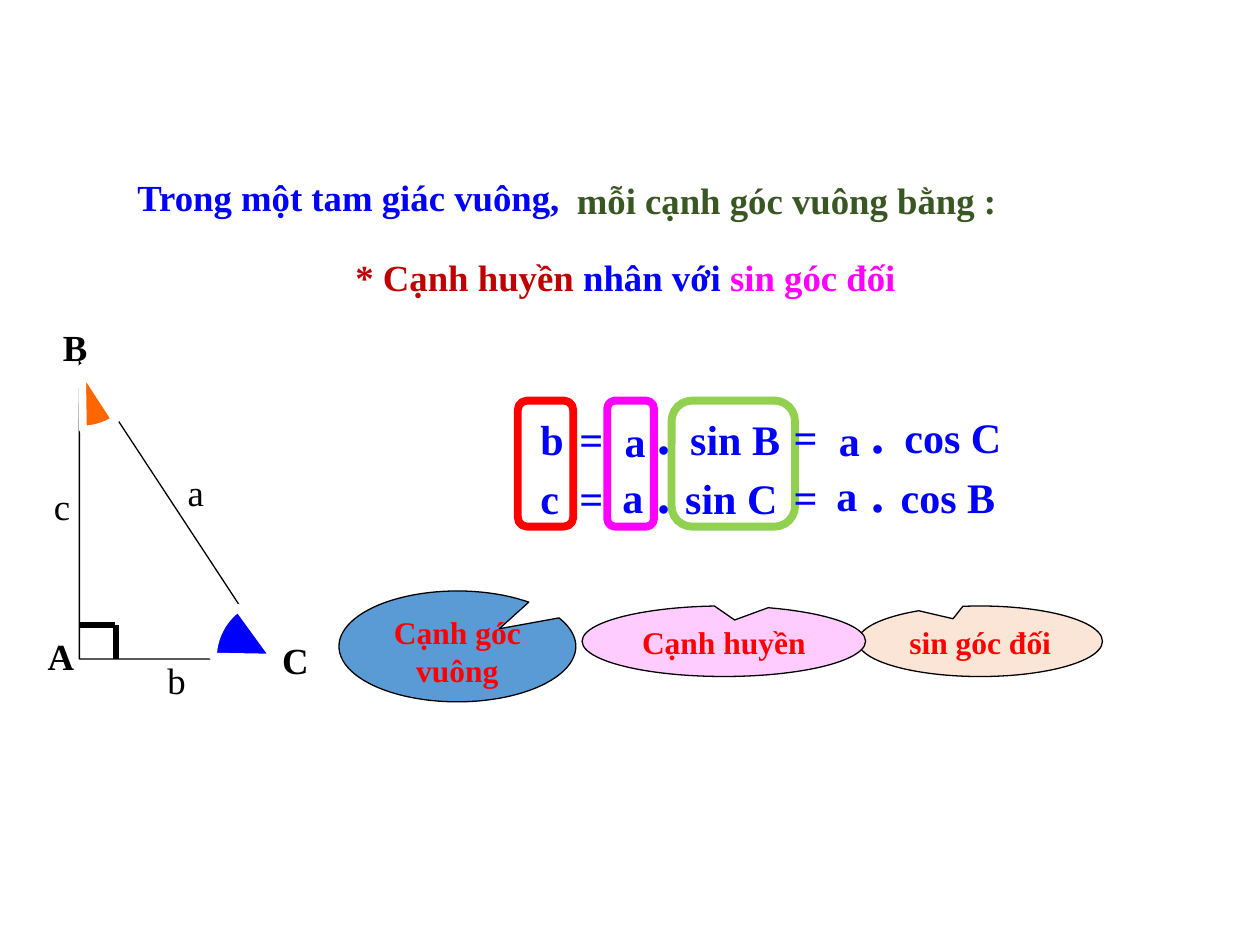
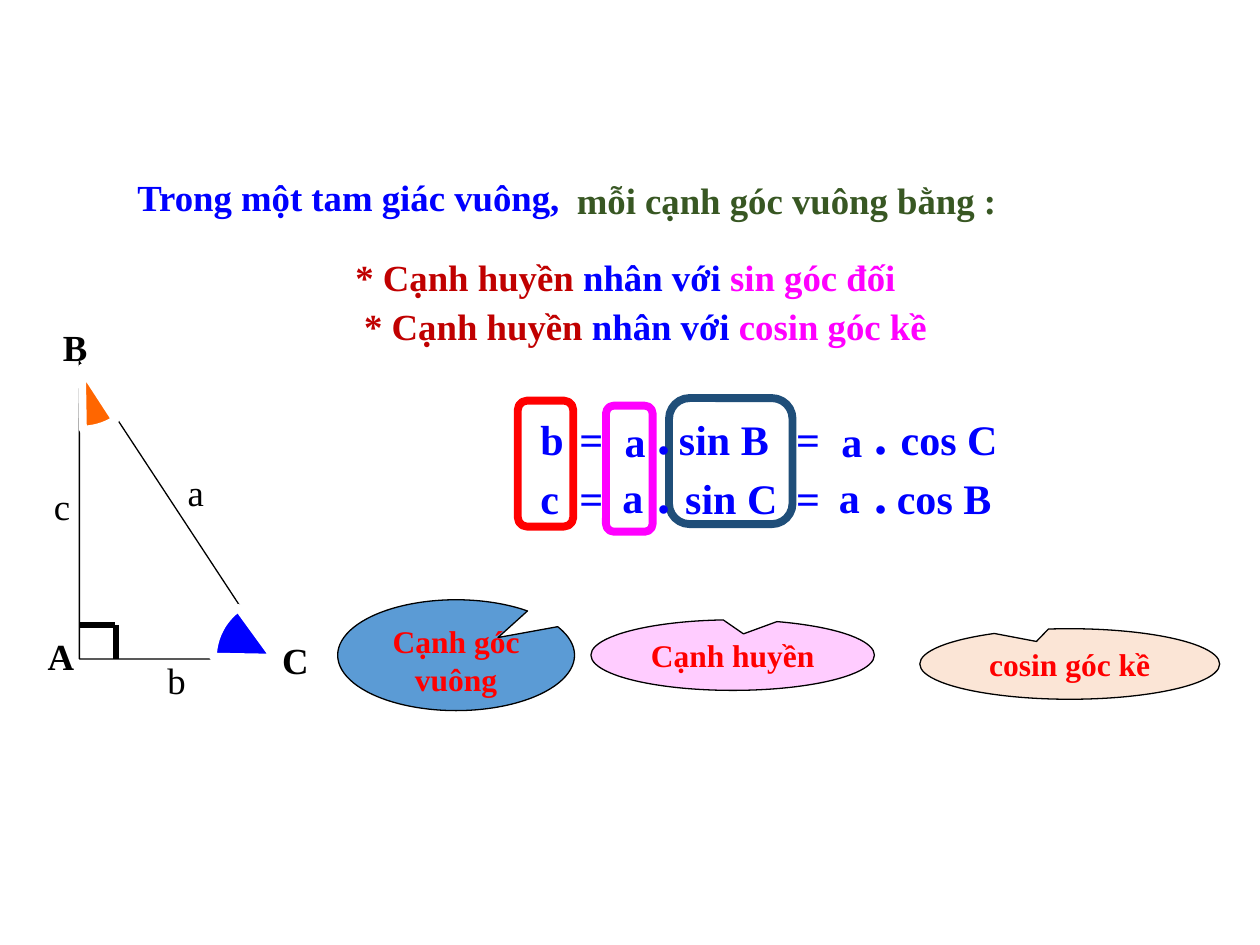
from math import cos, radians, sin

from lxml.etree import SubElement
from pptx import Presentation
from pptx.dml.color import RGBColor
from pptx.enum.shapes import MSO_CONNECTOR, MSO_SHAPE
from pptx.enum.text import MSO_ANCHOR, MSO_AUTO_SIZE, PP_ALIGN
from pptx.oxml.ns import qn
from pptx.util import Inches, Pt

FONT = "Times New Roman"
COLORS = {
    "black": "000000",
    "white": "FFFFFF",
    "blue": "0000FF",
    "red": "FF0000",
    "dark red": "C00000",
    "magenta": "FF00FF",
    "dark green": "385723",
    "light green": "92D050",
    "navy": "1F4E79",
    "orange": "FF6600",
    "steel": "5B9BD5",
    "pink": "FFCCFF",
    "peach": "FBE5D6",
}
ROW_STEP = 0.47
CALLOUT_TIPS = {"leg": (0.177, -0.159), "hypotenuse": (0.038, -0.301), "angle": (-0.111, -0.319)}


def rgb(name):
    """Return the named colour."""
    return RGBColor.from_string(COLORS[name])


def place(shape, left, top, width, height):
    """Move a shape to a box given in inches."""
    shape.left, shape.top = Inches(left), Inches(top)
    shape.width, shape.height = Inches(width), Inches(height)


def style_font(font, size, color, bold=True):
    """Apply the shared typeface with a size and colour."""
    font.name, font.size, font.bold = FONT, Pt(size), bold
    font.color.rgb = rgb(color)


def style_shape(shape, fill, line, line_width):
    """Set fill and outline, and remove the shadow."""
    shape.shadow.inherit = False
    if fill:
        shape.fill.solid()
        shape.fill.fore_color.rgb = rgb(fill)
    else:
        shape.fill.background()
    shape.line.color.rgb = rgb(line)
    shape.line.width = Pt(line_width)


def add_label(parent, text, left, top, width=0.38, height=0.51, size=24, color="blue", bold=True):
    """Add a one-line text box."""
    box = parent.shapes.add_textbox(Inches(left), Inches(top), Inches(width), Inches(height))
    box.text_frame.word_wrap = True
    paragraph = box.text_frame.paragraphs[0]
    paragraph.text = text
    style_font(paragraph.font, size, color, bold)


def add_statement(slide, left, top):
    """Write the opening of the theorem in the title and the text beside it."""
    title = slide.shapes.title
    place(title, left, top, 7.5, 0.45)
    title.text_frame.vertical_anchor = MSO_ANCHOR.TOP
    title.text_frame.auto_size = MSO_AUTO_SIZE.NONE
    paragraph = title.text_frame.paragraphs[0]
    paragraph.text = "Trong một tam giác vuông,"
    paragraph.alignment = PP_ALIGN.LEFT
    style_font(paragraph.font, 21, "blue")
    add_label(slide, "mỗi cạnh góc vuông bằng :", left + 3.49, top + 0.02, 3.8, 0.45, 21, "dark green")


def add_rules(slide, left, top, angles):
    """List the products of the hypotenuse in the body placeholder."""
    body = slide.placeholders[1]
    place(body, left, top, 5.44, 0.07 + 0.38 * len(angles))
    frame = body.text_frame
    frame.auto_size = MSO_AUTO_SIZE.NONE
    for index, angle in enumerate(angles):
        paragraph = frame.add_paragraph() if index else frame.paragraphs[0]
        paragraph.space_before = Pt(3 * index)
        properties = paragraph._p.get_or_add_pPr()
        properties.set("marL", str(Inches(0.22 + 0.07 * index)))
        properties.set("indent", "0")
        SubElement(properties, qn("a:buNone"))
        parts = [("* Cạnh huyền ", "dark red"), ("nhân với ", "blue"), (angle, "magenta")]
        for text, color in parts:
            run = paragraph.add_run()
            run.text = text
            style_font(run.font, 21, color)


def add_sector(group, apex_x, apex_y, start, end, fill):
    """Draw an angle marker as a circular sector between two angles in degrees."""
    radius, steps = 0.49, 12
    angles = [radians(start + (end - start) * step / steps) for step in range(steps + 1)]
    arc = [(Inches(apex_x + radius * cos(angle)), Inches(apex_y + radius * sin(angle))) for angle in angles]
    builder = group.shapes.build_freeform(Inches(apex_x), Inches(apex_y))
    builder.add_line_segments(arc, close=True)
    style_shape(builder.convert_to_shape(), fill, "white", 4.5)


def add_triangle(slide, left, top):
    """Draw the right triangle with its corners, sides and angle markers."""
    group = slide.shapes.add_group_shape()
    width, height, corner = 1.55, 2.36, 0.28
    triangle = group.shapes.add_shape(
        MSO_SHAPE.RIGHT_TRIANGLE, Inches(left), Inches(top), Inches(width), Inches(height))
    style_shape(triangle, "white", "black", 0.75)
    for text, x, y in [("A", -0.35, 2.11), ("B", -0.23, -0.34), ("C", 1.51, 2.14),
                       ("c", -0.3, 0.92), ("b", 0.6, 2.3), ("a", 0.76, 0.81)]:
        add_label(group, text, left + x, top + y, 0.42, 0.45, 21, "black", text.isupper())
    add_sector(group, left + width, top + height - 0.01, 181, 234, "blue")
    add_sector(group, left + 0.02, top + 0.05, 57, 89, "orange")
    base, mark = top + height, top + height - 0.27
    for start_x, end_x, end_y in [(left, left + corner, mark), (left + corner + 0.01, left + corner + 0.01, base)]:
        edge = group.shapes.add_connector(
            MSO_CONNECTOR.STRAIGHT, Inches(start_x), Inches(mark), Inches(end_x), Inches(end_y))
        edge.line.color.rgb = rgb("black")
        edge.line.width = Pt(3)
        SubElement(edge._element.spPr, qn("a:effectLst"))


def add_product(slide, left, top, ratios, ratio_offsets):
    """Write '= a . ratio' on two rows."""
    for row, (ratio, offset) in enumerate(zip(ratios, ratio_offsets)):
        y = top + row * ROW_STEP
        add_label(slide, "=", left, y)
        add_label(slide, "a", left + 0.36 - 0.02 * row, y + 0.02 - 0.03 * row)
        add_label(slide, ".", left + 0.62, y - 0.09, height=0.61, size=30)
        add_label(slide, ratio, left + offset, y, width=1)


def add_formulas(slide, left, top, sine_offsets, cosine_left, cosine_top, cosine_offsets):
    """Write both sides' formulas with sines and cosines."""
    for row, side in enumerate("bc"):
        add_label(slide, side, left, top + row * ROW_STEP)
    add_product(slide, left + 0.31, top, ("sin B", "sin C"), sine_offsets)
    add_product(slide, cosine_left, cosine_top, ("cos C", "cos B"), cosine_offsets)


def add_frames(slide, frames):
    """Outline the columns of the formulas."""
    for left, top, width, color in frames:
        frame = slide.shapes.add_shape(
            MSO_SHAPE.ROUNDED_RECTANGLE, Inches(left), Inches(top), Inches(width), Inches(1))
        style_shape(frame, None, color, 4.5)


def add_callout(slide, kind, text, left, top, width, height, fill):
    """Add an oval callout that names a part of the formula."""
    callout = slide.shapes.add_shape(
        MSO_SHAPE.OVAL_CALLOUT, Inches(left), Inches(top), Inches(width), Inches(height))
    callout.adjustments[0], callout.adjustments[1] = CALLOUT_TIPS[kind]
    style_shape(callout, fill, "black", 0.75)
    callout.text_frame.word_wrap = True
    callout.text_frame.vertical_anchor = MSO_ANCHOR.TOP
    paragraph = callout.text_frame.paragraphs[0]
    paragraph.text = text
    paragraph.alignment = PP_ALIGN.CENTER
    style_font(paragraph.font, 18, "red")


def add_callouts(slide, angle, angle_box, leg_corner, hypotenuse_corner):
    """Place the three callouts, the angle at the back."""
    add_callout(slide, "angle", angle, *angle_box, 0.56, "peach")
    add_callout(slide, "leg", "Cạnh góc vuông", *leg_corner, 1.88, 0.88, "steel")
    add_callout(slide, "hypotenuse", "Cạnh huyền", *hypotenuse_corner, 2.25, 0.56, "pink")


def add_theorem_slide(presentation, angles, frames, formulas, callouts):
    """Build one slide of the theorem."""
    slide = presentation.slides.add_slide(presentation.slide_layouts[1])
    add_statement(slide, 0.99, 1.34)
    add_rules(slide, 2.5, 1.97, angles)
    add_triangle(slide, 0.63, 2.87)
    add_frames(slide, [(4.11, 3.18, 0.44, "red"), *frames])
    add_formulas(slide, 4.19, 3.23, *formulas)
    add_callouts(slide, angles[-1], *callouts)


def main():
    """Build and save the presentation."""
    presentation = Presentation()
    presentation.slide_width, presentation.slide_height = Inches(10), Inches(7.5)
    add_theorem_slide(
        presentation,
        ["sin góc đối"],
        frames=[(4.82, 3.18, 0.37, "magenta"), (5.33, 3.18, 0.98, "light green")],
        formulas=((0.88, 0.84), 6.2, 3.22, (0.88, 0.85)),
        callouts=((6.81, 4.81, 1.94), (2.69, 4.69), (4.62, 4.81)),
    )
    add_theorem_slide(
        presentation,
        ["sin góc đối", "cosin góc kề"],
        frames=[(4.81, 3.22, 0.37, "magenta"), (5.31, 3.16, 0.98, "navy")],
        formulas=((0.79, 0.84), 6.22, 3.23, (0.83, 0.8)),
        callouts=((7.3, 4.99, 2.38), (2.68, 4.76), (4.69, 4.92)),
    )
    presentation.save("out.pptx")


if __name__ == "__main__":
    main()
